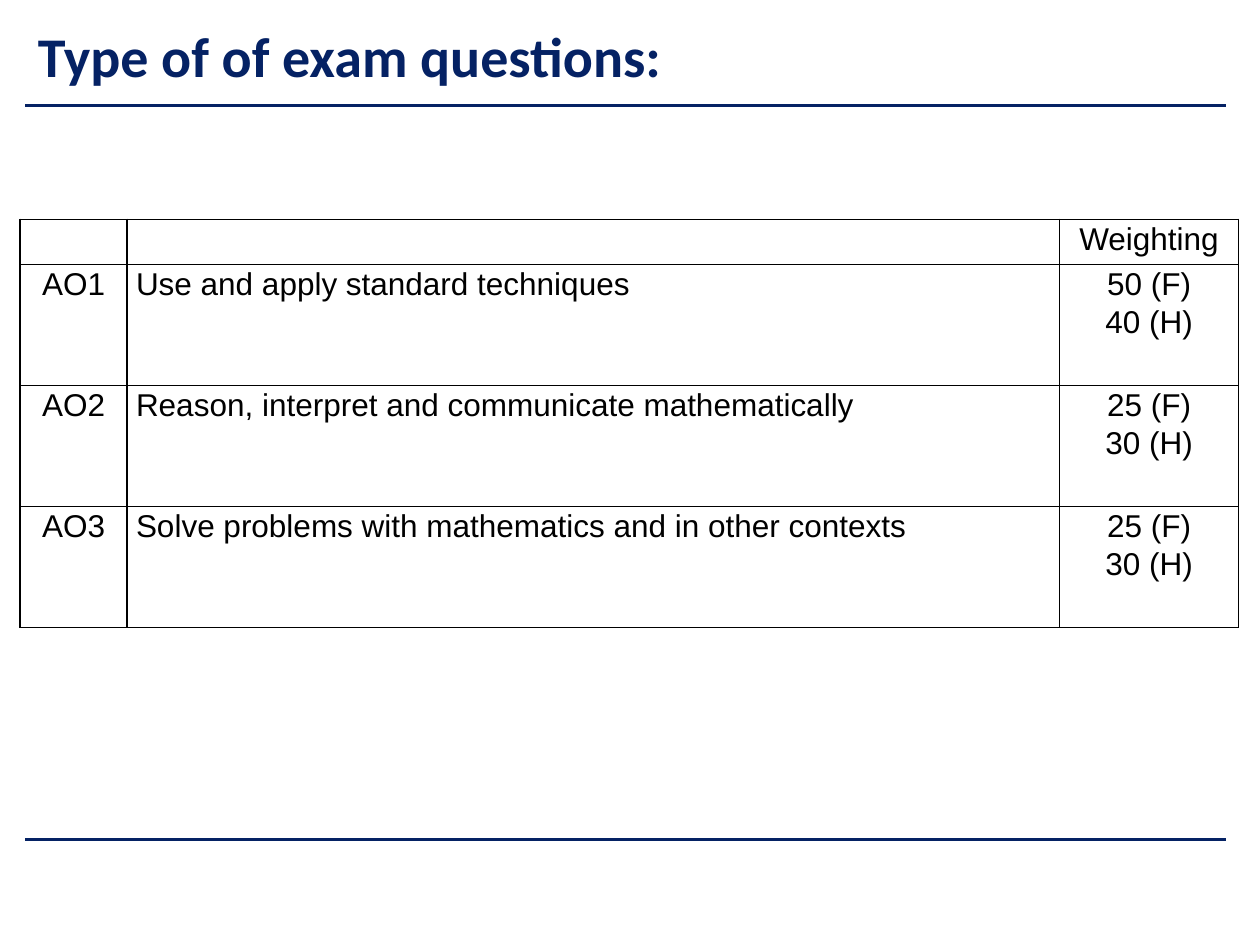
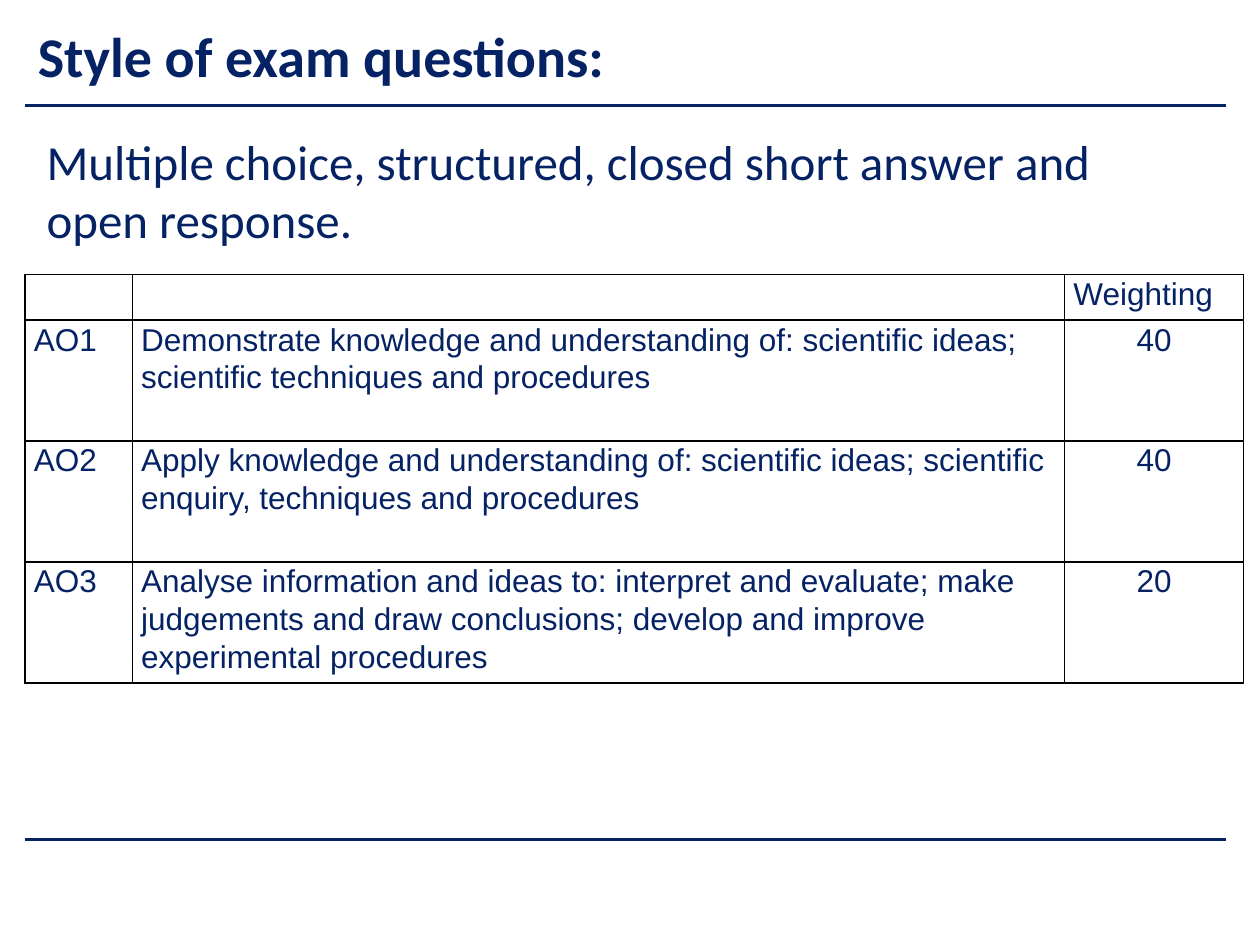
from dataclasses import dataclass

from lxml.etree import SubElement
from pptx import Presentation
from pptx.dml.color import RGBColor
from pptx.enum.shapes import MSO_CONNECTOR as Connector
from pptx.enum.text import MSO_ANCHOR as Anchor, MSO_AUTO_SIZE as AutoSize, PP_ALIGN as Align
from pptx.oxml.ns import qn
from pptx.util import Inches, Pt


@dataclass(frozen=True)
class Theme:
    navy: RGBColor = RGBColor(0x05, 0x22, 0x64)
    black: RGBColor = RGBColor(0, 0, 0)
    heading_font: str = "Calibri"
    table_font: str = "Arial"
    title_size: int = 32
    body_size: int = 28
    table_size: int = 18


THEME = Theme()
TITLE_ONLY, TITLE_AND_BODY = 5, 1
TITLE_BOX = (0.2, 0.13, 6.77, 0.61)
BODY_BOX = (0.27, 0.99, 9, 0.47)
RULES = ((0.84, 1.5), (6.66, 1.75))  # height on the page, line width
RULE_LEFT, RULE_RIGHT = 0.2, 9.73
COLUMN_WIDTHS = (0.85, 7.4, 1.42)
HEADER_HEIGHT, ROW_HEIGHT = 0.36, 0.96
HEADER = ("", "", "Weighting")

MATHS_ROWS = (
    ("AO1", "Use and apply standard techniques", "50 (F)\n40 (H)"),
    ("AO2", "Reason, interpret and communicate mathematically", "25 (F)\n30 (H)"),
    ("AO3", "Solve problems with mathematics and in other contexts", "25 (F)\n30 (H)"),
)
SCIENCE_ROWS = (
    ("AO1", "Demonstrate knowledge and understanding of: scientific ideas; "
            "scientific techniques and procedures", "40"),
    ("AO2", "Apply knowledge and understanding of: scientific ideas; "
            "scientific enquiry, techniques and procedures", "40"),
    ("AO3", "Analyse information and ideas to: interpret and evaluate; make judgements "
            "and draw conclusions; develop and improve experimental procedures", "20"),
)


def style_font(para, name, size, color, bold=False):
    font = para.font
    font.name, font.size, font.bold = name, Pt(size), bold
    font.color.rgb = color


def fill_placeholder(holder, box, text, size, anchor, bold=False):
    holder.left, holder.top, holder.width, holder.height = map(Inches, box)
    frame = holder.text_frame
    frame.text = text
    frame.word_wrap = True
    frame.auto_size = AutoSize.NONE
    frame.vertical_anchor = anchor
    para = frame.paragraphs[0]
    para.alignment = Align.LEFT
    para.space_before = Pt(0)
    properties = para._p.get_or_add_pPr()
    properties.set("marL", "0")
    properties.set("indent", "0")
    SubElement(properties, qn("a:buNone"))
    style_font(para, THEME.heading_font, size, THEME.navy, bold)


def add_rules(page):
    for height, width in RULES:
        rule = page.shapes.add_connector(
            Connector.STRAIGHT, Inches(RULE_LEFT), Inches(height),
            Inches(RULE_RIGHT), Inches(height))
        rule.line.color.rgb = THEME.navy
        rule.line.width = Pt(width)
        SubElement(rule._element.spPr, qn("a:effectLst"))


def add_page(deck, layout, title):
    page = deck.slides.add_slide(deck.slide_layouts[layout])
    add_rules(page)
    fill_placeholder(page.shapes.title, TITLE_BOX, title,
                     THEME.title_size, Anchor.MIDDLE, bold=True)
    return page


def add_borders(cell):
    properties = cell._tc.get_or_add_tcPr()
    for side in ("lnL", "lnR", "lnT", "lnB"):
        border = SubElement(properties, qn(f"a:{side}"), w=str(Pt(1)))
        fill = SubElement(border, qn("a:solidFill"))
        SubElement(fill, qn("a:srgbClr"), val=str(THEME.black))


def fill_cell(cell, text, alignment, color):
    add_borders(cell)
    cell.fill.background()
    cell.margin_left = cell.margin_right = Inches(0.07)
    cell.margin_top = cell.margin_bottom = 0
    cell.text = text
    for para in cell.text_frame.paragraphs:
        para.alignment = alignment
        para.line_spacing = 1.07
        style_font(para, THEME.table_font, THEME.table_size, color)


def add_objectives_table(page, left, top, rows, color, label_align):
    """Only the label column and the header follow label_align."""
    row_heights = (HEADER_HEIGHT,) + (ROW_HEIGHT,) * len(rows)
    table = page.shapes.add_table(
        len(row_heights), len(COLUMN_WIDTHS), Inches(left), Inches(top),
        Inches(sum(COLUMN_WIDTHS)), Inches(sum(row_heights))).table
    table.first_row = table.horz_banding = False
    for column, width in zip(table.columns, COLUMN_WIDTHS):
        column.width = Inches(width)
    for row, height in zip(table.rows, row_heights):
        row.height = Inches(height)

    header_aligns = (label_align,) * len(HEADER)
    row_aligns = (label_align, Align.LEFT, Align.CENTER)
    for row_index, texts in enumerate((HEADER, *rows)):
        aligns = row_aligns if row_index else header_aligns
        for column_index, (text, alignment) in enumerate(zip(texts, aligns)):
            fill_cell(table.cell(row_index, column_index), text, alignment, color)


def add_question_types(deck):
    page = add_page(deck, TITLE_ONLY, "Type of of exam questions:")
    add_objectives_table(page, 0.16, 1.74, MATHS_ROWS, THEME.black, Align.CENTER)


def add_question_styles(deck):
    page = add_page(deck, TITLE_AND_BODY, "Style of exam questions:")
    fill_placeholder(
        page.placeholders[1], BODY_BOX,
        "Multiple choice, structured, closed short answer and open response.",
        THEME.body_size, Anchor.TOP)
    add_objectives_table(page, 0.2, 2.18, SCIENCE_ROWS, THEME.navy, Align.LEFT)


def main():
    deck = Presentation()
    deck.slide_width, deck.slide_height = Inches(10), Inches(7.5)
    add_question_types(deck)
    add_question_styles(deck)
    deck.save("out.pptx")


if __name__ == "__main__":
    main()
